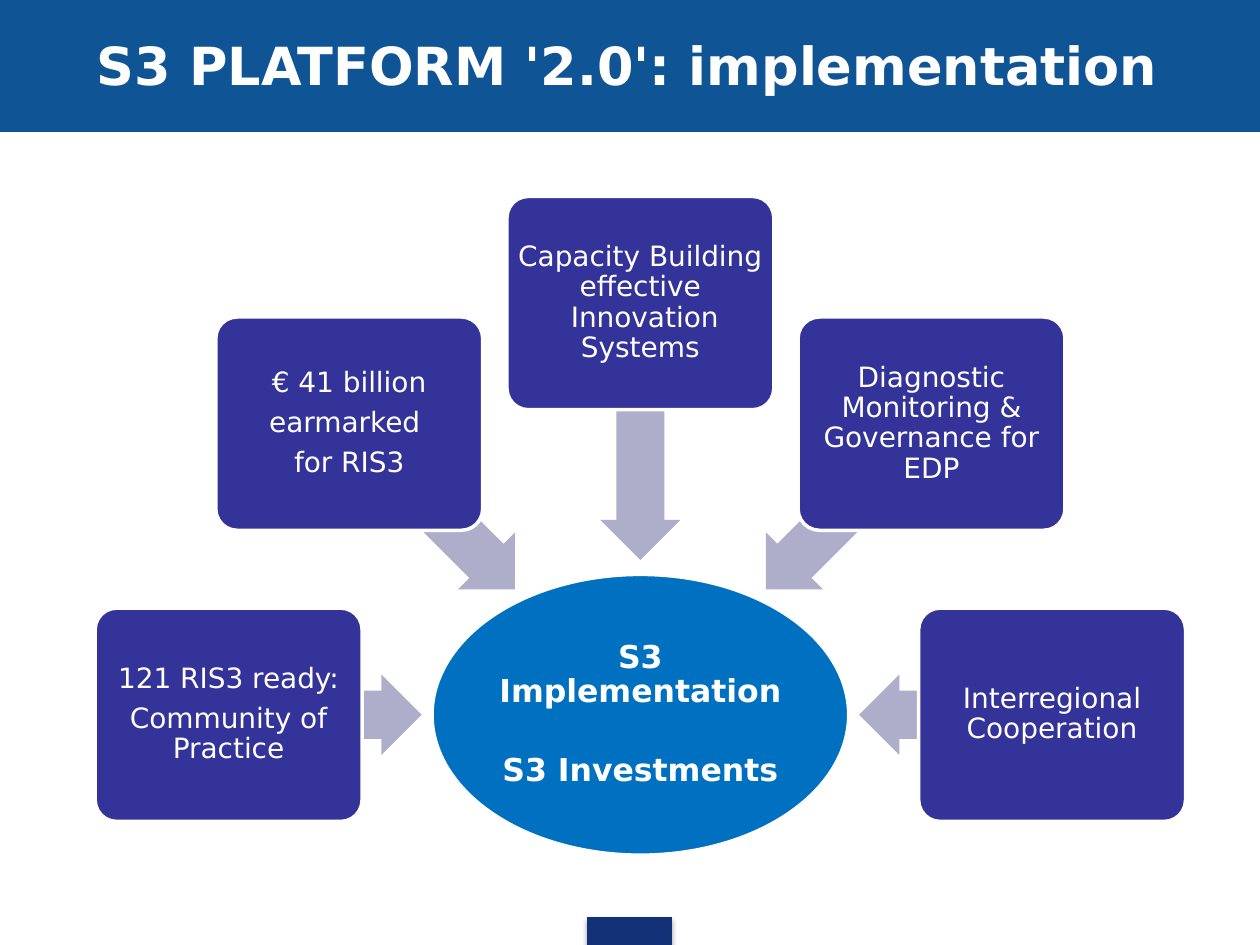
import math
from dataclasses import dataclass

import lxml.etree
import pptx
import pptx.dml.color
import pptx.enum.shapes
import pptx.enum.text
import pptx.oxml
import pptx.oxml.ns
import pptx.util

Cm = pptx.util.Cm
Pt = pptx.util.Pt
SHAPE = pptx.enum.shapes.MSO_SHAPE
ALIGN = pptx.enum.text.PP_ALIGN


@dataclass(frozen=True)
class Theme:
    font: str = "DejaVu Sans"
    white: str = "FFFFFF"
    banner: str = "0F5494"
    tab: str = "133176"
    hub: str = "0070C0"
    box: str = "333399"
    arrow: str = "AEAECA"
    title_size: float = 30
    hub_size: float = 18
    box_size: float = 16


THEME = Theme()
HUB_X, HUB_Y = 12.91, 14.41
RADIUS = 8.3
BOX_W, BOX_H = 5.38, 4.3
ARROW_H = 1.62

SPOKES = [
    (180, 3.89, ["121 RIS3 ready:", "Community of Practice"]),
    (225, 4.72, ["€ 41 billion", "earmarked ", "for RIS3"]),
    (270, 5.18, ["Capacity Building effective\v Innovation Systems"]),
    (315, 4.72, ["Diagnostic Monitoring & Governance for EDP"]),
    (0, 3.89, ["Interregional Cooperation"]),
]


def rgb(value):
    return pptx.dml.color.RGBColor.from_string(value)


def add_block(s, kind, x, y, w, h, fill, line=None, line_width=2):
    sp = s.shapes.add_shape(kind, Cm(x), Cm(y), Cm(w), Cm(h))
    sp.shadow.inherit = False
    sp.fill.solid()
    sp.fill.fore_color.rgb = rgb(fill)
    if line:
        sp.line.color.rgb = rgb(line)
        sp.line.width = Pt(line_width)
    else:
        sp.line.fill.background()
    return sp


def add_centred(s, kind, x, y, w, h, fill, line=None):
    return add_block(s, kind, x - w / 2, y - h / 2, w, h, fill, line)


def add_drop_shadow(sp):
    effects = sp._element.spPr.find(pptx.oxml.ns.qn("a:effectLst"))
    effects.append(pptx.oxml.parse_xml(
        '<a:outerShdw xmlns:a="http://schemas.openxmlformats.org/drawingml/2006/main"'
        ' blurRad="40000" dist="23000" dir="5400000" rotWithShape="0">'
        '<a:srgbClr val="000000"><a:alpha val="35000"/></a:srgbClr></a:outerShdw>'))


def style(p, size, bold):
    p.font.name = THEME.font
    p.font.size = Pt(size)
    p.font.bold = bold
    p.font.color.rgb = rgb(THEME.white)


def fill_text(sp, lines, size, inset, bold=False):
    tf = sp.text_frame
    tf.word_wrap = True
    tf.vertical_anchor = pptx.enum.text.MSO_ANCHOR.MIDDLE
    tf.margin_left = tf.margin_right = tf.margin_top = tf.margin_bottom = Cm(inset)
    for i, line in enumerate(lines):
        p = tf.paragraphs[0] if i == 0 else tf.add_paragraph()
        p.text = line
        p.alignment = ALIGN.CENTER
        p.line_spacing = 0.9
        p.space_after = Pt(size * 0.35)
        style(p, size, bold)
    return tf


def add_title(s, text):
    sp = s.shapes.add_textbox(Cm(1.7), Cm(0), Cm(22.8), Cm(2.6))
    tf = sp.text_frame
    tf.word_wrap = True
    tf.vertical_anchor = pptx.enum.text.MSO_ANCHOR.MIDDLE
    p = tf.paragraphs[0]
    p.text = text
    style(p, THEME.title_size, True)


def add_hub(s, lines):
    sp = add_centred(s, SHAPE.OVAL, HUB_X, HUB_Y, 8.4, 5.66, THEME.hub, THEME.white)
    tf = fill_text(sp, lines, THEME.hub_size, 0.03, bold=True)
    tf.paragraphs[0].space_after = Pt(26)


def add_spoke(s, angle, length, lines):
    dx, dy = math.cos(math.radians(angle)), math.sin(math.radians(angle))
    reach = RADIUS - length / 2
    arrow = add_centred(s, SHAPE.LEFT_ARROW, HUB_X + reach * dx, HUB_Y + reach * dy,
                        length, ARROW_H, THEME.arrow)
    arrow.adjustments[0] = 0.6
    arrow.adjustments[1] = 0.5
    arrow.rotation = angle
    box = add_centred(s, SHAPE.ROUNDED_RECTANGLE, HUB_X + RADIUS * dx, HUB_Y + RADIUS * dy,
                      BOX_W, BOX_H, THEME.box, THEME.white)
    box.adjustments[0] = 0.1
    fill_text(box, lines, THEME.box_size, 0.08)


def main():
    prs = pptx.Presentation()
    prs.slide_width, prs.slide_height = Cm(25.4), Cm(19.05)
    s = prs.slides.add_slide(prs.slide_layouts[6])
    add_block(s, SHAPE.RECTANGLE, 0, 0, 25.4, 2.66, THEME.banner, THEME.banner, 0.75)
    tab = add_block(s, SHAPE.RECTANGLE, 11.84, 18.49, 1.7, 0.56, THEME.tab, THEME.tab, 0.75)
    add_drop_shadow(tab)
    add_title(s, "S3 PLATFORM '2.0': implementation")
    add_hub(s, ["S3 Implementation", "S3 Investments"])
    for angle, length, lines in SPOKES:
        add_spoke(s, angle, length, lines)
    prs.save("out.pptx")


if __name__ == "__main__":
    main()
